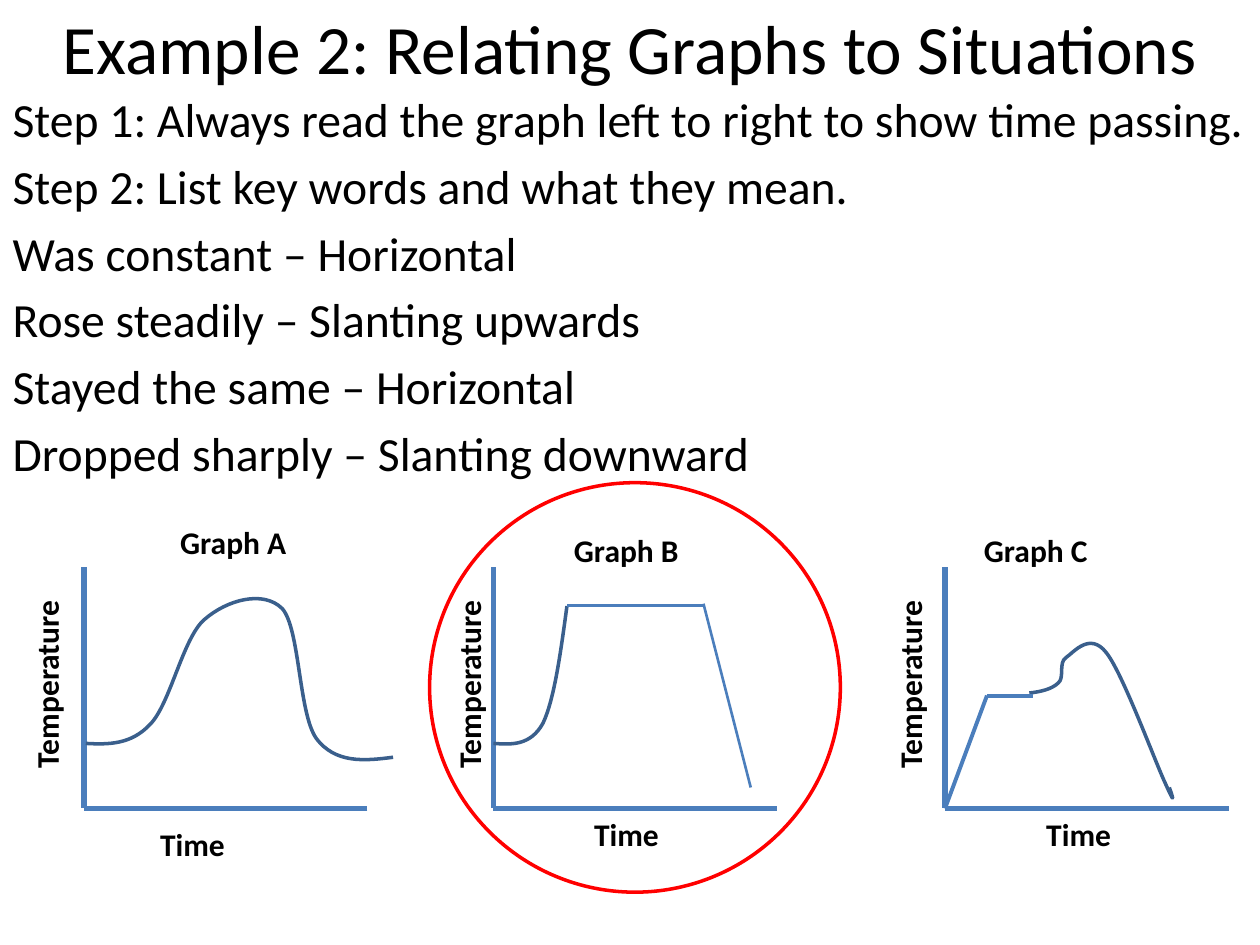
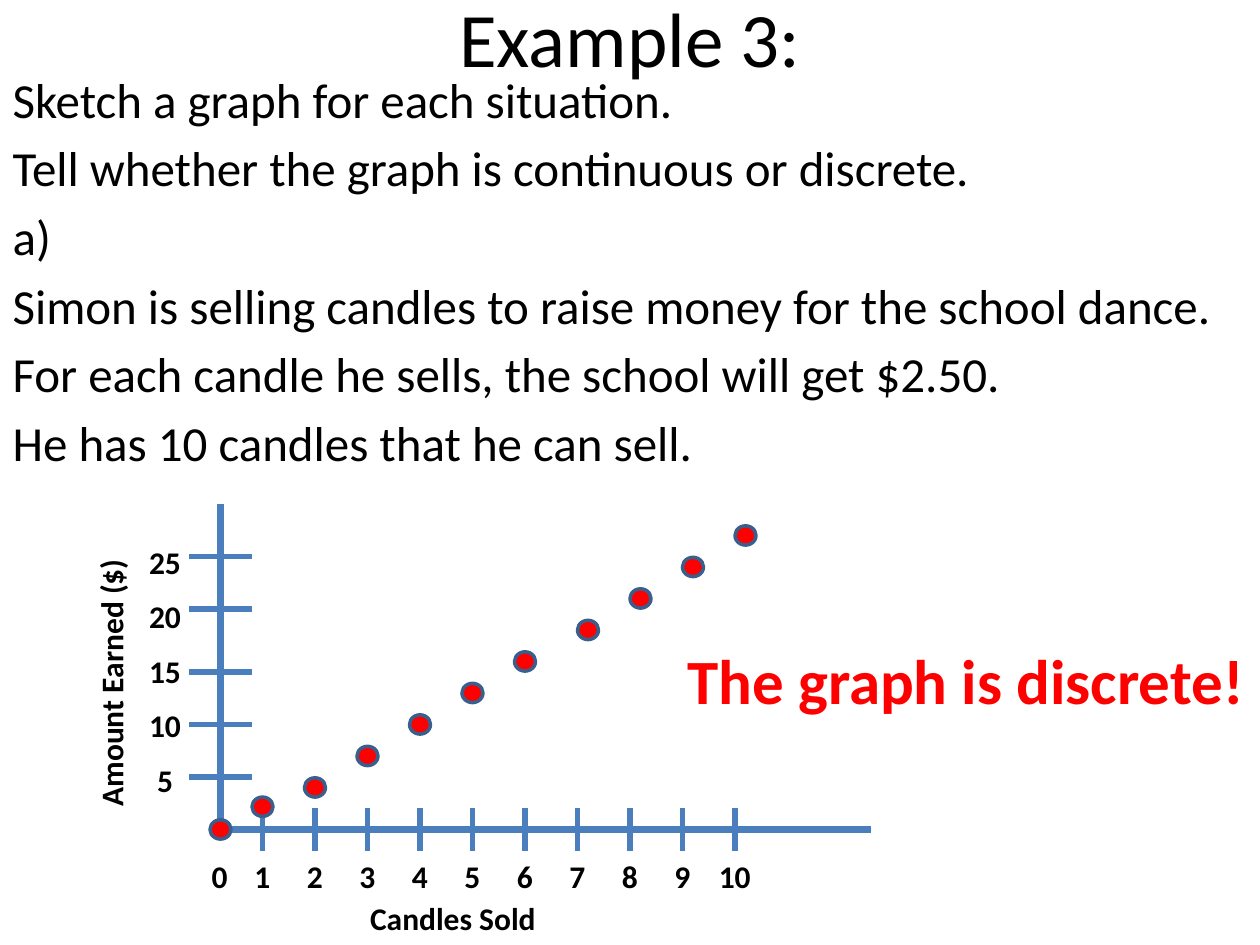
import pptx
import pptx.dml.color
import pptx.enum.shapes
import pptx.enum.text
import pptx.oxml
import pptx.oxml.ns
import pptx.util
from lxml import etree

Pt = pptx.util.Pt
RGBColor = pptx.dml.color.RGBColor
SHAPES = pptx.enum.shapes.MSO_SHAPE
CENTER = pptx.enum.text.PP_ALIGN.CENTER

FONT = "Calibri"
BLACK = RGBColor(0x00, 0x00, 0x00)
RED = RGBColor(0xFF, 0x00, 0x00)
AXIS_BLUE = RGBColor(0x4B, 0x7E, 0xBC)
CURVE_BLUE = RGBColor(0x3A, 0x5F, 0x8C)

# All lengths are in points; boxes are (left, top, width, height).
RELATING = {
    "title": "Example 2: Relating Graphs to Situations",
    "title_box": (0, -18, 720, 90),
    "title_size": 39.6,
    "body": [
        "Step 1: Always read the graph left to right to show time passing.",
        "Step 2: List key words and what they mean.",
        "Was constant – Horizontal",
        "Rose steadily – Slanting upwards",
        "Stayed the same – Horizontal",
        "Dropped sharply – Slanting downward",
    ],
    "body_box": (0, 48, 720, 234),
    "body_size": 27.2,
}
SKETCHING = {
    "title": "Example 3:",
    "title_box": (36, -24, 648, 90),
    "title_size": 44,
    "body": [
        "Sketch a graph for each situation.",
        "Tell whether the graph is continuous or discrete.",
        "a)",
        "Simon is selling candles to raise money for the school dance.",
        "For each candle he sells, the school will get $2.50.",
        "He has 10 candles that he can sell.",
    ],
    "body_box": (0, 36, 720, 428),
    "body_size": 28,
}

AXIS_TOP, AXIS_BASE, AXIS_LENGTH = 324, 462, 162
# "curve" is a start point followed by three Bézier points per segment.
GRAPHS = [
    {
        "name": "Graph A", "name_at": (95.8, 295.2), "origin": 48,
        "time_at": (84, 468), "temperature_x": 26.6,
        "curve": [
            (49, 424.8),
            (61.9, 425.5), (74.9, 425.5), (85.7, 414),
            (97.2, 402.5), (104.4, 365), (116.6, 354.2),
            (129.6, 342.7), (150.5, 337), (161.3, 347.8),
            (171.4, 359.3), (170.6, 407.5), (180.7, 421.9),
            (191.5, 436.3), (208.1, 434.9), (224.6, 432.7),
        ],
        "lines": [], "line_width": 1.5,
    },
    {
        "name": "Graph B", "name_at": (320.4, 300), "origin": 282,
        "time_at": (332, 462), "temperature_x": 267.8,
        "curve": [
            (282, 424.8),
            (292.3, 425.5), (303.1, 426.2), (310.3, 413.3),
            (316.8, 399.6), (320.4, 373), (324, 346.3),
        ],
        "lines": [(324, 346, 402, 346), (402, 345, 429, 450)],
        "line_width": 1.5,
    },
    {
        "name": "Graph C", "name_at": (554.4, 300), "origin": 540,
        "time_at": (590.4, 462), "temperature_x": 519.8,
        "curve": [
            (588.2, 396),
            (594.7, 395.3), (601.2, 393.8), (604.8, 390.2),
            (608.4, 387.4), (604.8, 378.7), (609.1, 375.8),
            (613.4, 373), (622.8, 360.7), (632.2, 373),
            (641.5, 384.5), (660.2, 435.6), (666, 447.8),
            (671.8, 460.8), (670.3, 455.8), (668.2, 450),
        ],
        "lines": [(540, 462, 564, 397.5), (564, 397.5, 590.4, 397.5)],
        "line_width": 2.25,
    },
]
ANSWER_CIRCLE = (245.5, 275.8, 234.7, 234)

CANDLE_ORIGIN = (126, 474)
CANDLE_TICKS = [150 + 30 * index for index in range(10)]
AMOUNT_TICKS = [444, 414, 384, 348, 318]
AMOUNTS = ["25", "20", "15", "10", "5"]
SALES = [
    (126, 474), (150, 461), (180, 450), (210, 432), (240, 414), (270, 396),
    (300, 378), (336, 360), (366, 342), (396, 324), (426, 306),
]
DOT_WIDTH, DOT_HEIGHT = 12, 11
COUNT_LEFT, INSET = 113.8, 7.2


def points(values):
    return [Pt(value) for value in values]


def style_runs(para, size, color=BLACK, bold=False):
    for run in para.runs:
        run.font.name = FONT
        run.font.size = Pt(size)
        run.font.bold = bold
        run.font.color.rgb = color


def fill_placeholder(placeholder, box, lines, size):
    placeholder.left, placeholder.top, placeholder.width, placeholder.height = points(box)
    frame = placeholder.text_frame
    frame.auto_size = pptx.enum.text.MSO_AUTO_SIZE.NONE
    frame.text = "\n".join(lines)
    for para in frame.paragraphs:
        style_runs(para, size)
    return frame


def add_text_slide(deck, content):
    slide = deck.slides.add_slide(deck.slide_layouts[1])
    fill_placeholder(slide.shapes.title, content["title_box"],
                     [content["title"]], content["title_size"])
    frame = fill_placeholder(slide.placeholders[1], content["body_box"],
                             content["body"], content["body_size"])
    frame.margin_right = 0
    for para in frame.paragraphs:
        properties = para._p.get_or_add_pPr()
        properties.set("marL", "0")
        properties.set("indent", "0")
        etree.SubElement(properties, pptx.oxml.ns.qn("a:buNone"))
    return slide


def add_label(slide, text, box, size=18, color=BLACK, rotation=0):
    label = slide.shapes.add_textbox(*points(box))
    label.rotation = rotation
    frame = label.text_frame
    frame.word_wrap = False
    frame.text = text
    for para in frame.paragraphs:
        para.alignment = CENTER
        style_runs(para, size, color, bold=True)
    return frame


def add_upright_label(slide, text, center_x, center_y, length):
    box = (center_x - length / 2, center_y - 14.4, length, 28.8)
    add_label(slide, text, box, rotation=270)


def add_line(slide, ends, width):
    line = slide.shapes.add_connector(
        pptx.enum.shapes.MSO_CONNECTOR.STRAIGHT, *points(ends))
    line.line.color.rgb = AXIS_BLUE
    line.line.width = Pt(width)
    etree.SubElement(line._element.spPr, pptx.oxml.ns.qn("a:effectLst"))


def outline(shape, color):
    shape.shadow.inherit = False
    shape.fill.background()
    shape.line.color.rgb = color
    shape.line.width = Pt(2)


def add_curve(slide, curve):
    """Draw a polyline, then merge each three of its points into a Bézier segment."""
    start, *rest = [points(point) for point in curve]
    builder = slide.shapes.build_freeform(*start)
    builder.add_line_segments(rest, close=False)
    shape = builder.convert_to_shape()
    outline(shape, CURVE_BLUE)
    segments = list(shape._element.iter(pptx.oxml.ns.qn("a:lnTo")))
    for index in range(0, len(segments), 3):
        first, *others = segments[index:index + 3]
        bezier = etree.Element(pptx.oxml.ns.qn("a:cubicBezTo"))
        first.addprevious(bezier)
        for segment in (first, *others):
            bezier.append(segment[0])
            segment.getparent().remove(segment)


def add_ellipse(slide, box, line_color):
    ellipse = slide.shapes.add_shape(SHAPES.OVAL, *points(box))
    outline(ellipse, line_color)
    return ellipse


def add_temperature_graph(slide, graph):
    origin = graph["origin"]
    add_line(slide, (origin, AXIS_TOP, origin, AXIS_BASE), 3)
    add_line(slide, (origin + AXIS_LENGTH, AXIS_BASE, origin, AXIS_BASE), 3)
    add_upright_label(slide, "Temperature", graph["temperature_x"], 391, 111)
    add_label(slide, "Time", (*graph["time_at"], 52, 28.8))
    add_label(slide, graph["name"], (*graph["name_at"], 75, 28.8))
    add_curve(slide, graph["curve"])
    for ends in graph["lines"]:
        add_line(slide, ends, graph["line_width"])


def add_candle_counts(slide):
    """Write 0 to 10 in one line, each number centred under its tick by a tab stop."""
    text = "\t".join(str(count) for count in range(11))
    frame = add_label(slide, text, (COUNT_LEFT, 486, 340, 28.8))
    frame.word_wrap = True
    para = frame.paragraphs[0]
    para.alignment = pptx.enum.text.PP_ALIGN.LEFT
    tabs = etree.SubElement(para._p.get_or_add_pPr(), pptx.oxml.ns.qn("a:tabLst"))
    for tick in CANDLE_TICKS:
        position = Pt(tick - COUNT_LEFT - INSET)
        etree.SubElement(tabs, pptx.oxml.ns.qn("a:tab"), pos=str(position), algn="ctr")


def add_candle_graph(slide):
    x, y = CANDLE_ORIGIN
    add_line(slide, (x, 288, x, y), 4.5)
    add_line(slide, (x, y, 498, y), 4.5)
    for tick in CANDLE_TICKS:
        add_line(slide, (tick, y - 12, tick, y + 12), 3)
    for tick in AMOUNT_TICKS:
        add_line(slide, (x - 18, tick, x + 18, tick), 3)
    add_candle_counts(slide)
    amounts = add_label(slide, "\n".join(AMOUNTS), (77.8, 306.7, 33, 155))
    for para in amounts.paragraphs[1:]:
        para.space_before = Pt(9.5)
    add_label(slide, "Candles Sold", (203.8, 510, 110, 28.8))
    add_upright_label(slide, "Amount Earned ($)", 63.4, 390.2, 157)
    for center_x, center_y in SALES:
        box = (center_x - DOT_WIDTH / 2, center_y - DOT_HEIGHT / 2, DOT_WIDTH, DOT_HEIGHT)
        dot = add_ellipse(slide, box, CURVE_BLUE)
        dot.fill.solid()
        dot.fill.fore_color.rgb = RED


def main():
    deck = pptx.Presentation()
    deck.slide_width, deck.slide_height = Pt(720), Pt(540)

    slide = add_text_slide(deck, RELATING)
    for graph in GRAPHS:
        add_temperature_graph(slide, graph)
    add_ellipse(slide, ANSWER_CIRCLE, RED)

    slide = add_text_slide(deck, SKETCHING)
    add_candle_graph(slide)
    add_label(slide, "The graph is discrete!", (383.8, 363, 336, 51), 36, RED)

    deck.save("out.pptx")


if __name__ == "__main__":
    main()
